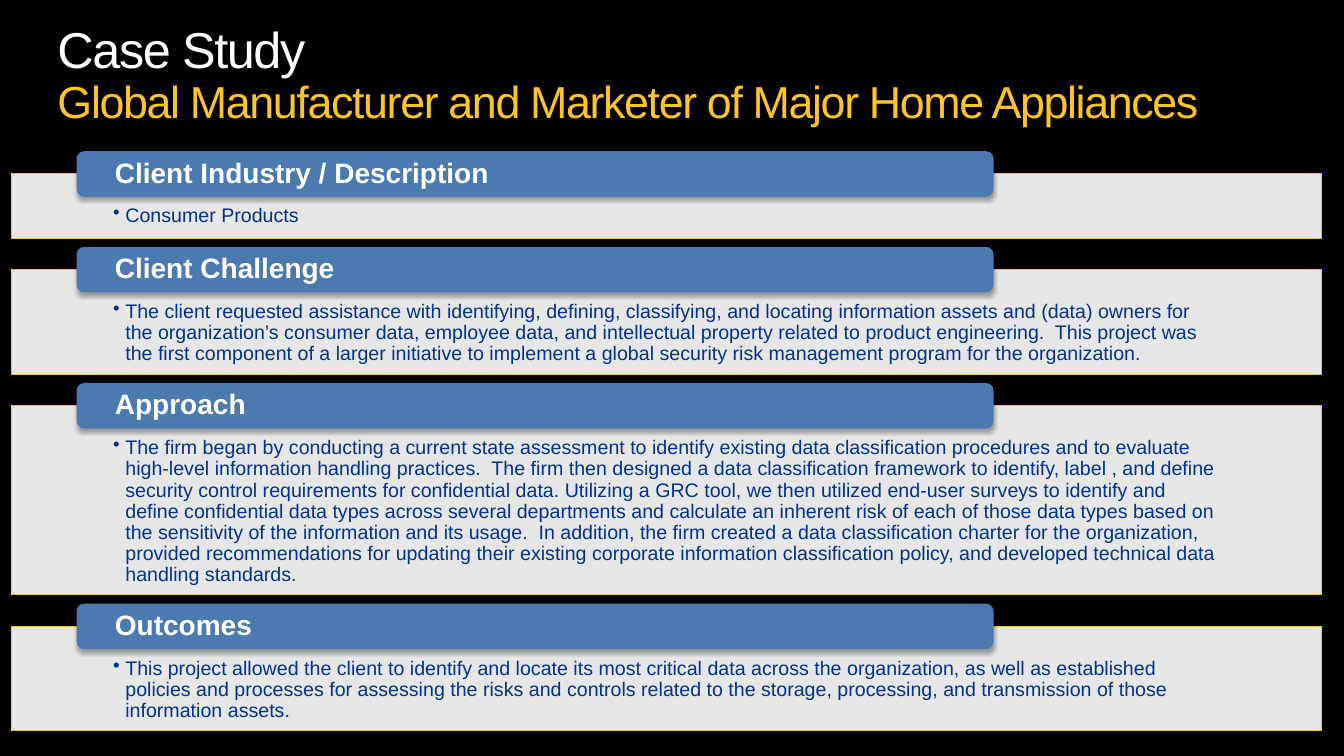
from lxml import etree
from pptx import Presentation
from pptx.dml.color import RGBColor
from pptx.enum.shapes import MSO_SHAPE as SHAPE
from pptx.enum.text import MSO_ANCHOR as ANCHOR
from pptx.oxml import parse_xml
from pptx.oxml.ns import nsdecls, qn
from pptx.util import Cm, Pt

HEADER_TOP = 3.81
HEADER_OVERLAP = 0.57
SECTION_GAP = 0.22

SECTIONS = [
    ("Client Industry / Description", 1.62, "Consumer Products"),
    ("Client Challenge", 2.64,
     "The client requested assistance with identifying, defining, classifying, and locating "
     "information assets and (data) owners for the organization’s consumer data, employee data, "
     "and intellectual property related to product engineering.  This project was the first "
     "component of a larger initiative to implement a global security risk management program "
     "for the organization."),
    ("Approach", 4.77,
     "The firm began by conducting a current state assessment to identify existing data "
     "classification procedures and to evaluate high-level information handling practices.  "
     "The firm then designed a data classification framework to identify, label , and define "
     "security control requirements for confidential data. Utilizing a GRC tool, we then "
     "utilized end-user surveys to identify and define confidential data types across several "
     "departments and calculate an inherent risk of each of those data types based on the "
     "sensitivity of the information and its usage.  In addition, the firm created a data "
     "classification charter for the organization, provided recommendations for updating their "
     "existing corporate information classification policy, and developed technical data "
     "handling standards."),
    ("Outcomes", 2.64,
     "This project allowed the client to identify and locate its most critical data across the "
     "organization, as well as established policies and processes for assessing the risks and "
     "controls related to the storage, processing, and transmission of those information assets."),
]


def rgb(value):
    return RGBColor.from_string(value)


class CaseSlide:
    font = "Arial"
    white = "FFFFFF"
    gold = "FFC425"
    blue = "4A7AAF"
    navy = "00338D"

    def __init__(self, prs):
        self.s = prs.slides.add_slide(prs.slide_layouts[6])
        fill = self.s.background.fill
        fill.solid()
        fill.fore_color.rgb = rgb("000000")

    def style(self, r, size, color, bold=False):
        r.font.name = self.font
        r.font.size = Pt(size)
        r.font.bold = bold
        r.font.color.rgb = rgb(color)

    def frame(self, sp, text, anchor, side=0, top=0, bottom=0):
        tf = sp.text_frame
        tf.word_wrap = True
        tf.vertical_anchor = anchor
        tf.margin_left = tf.margin_right = Cm(side)
        tf.margin_top, tf.margin_bottom = Cm(top), Cm(bottom)
        tf.text = text
        p = tf.paragraphs[0]
        p.line_spacing = 0.9
        return p

    def box(self, kind, x, y, w, h, color):
        sp = self.s.shapes.add_shape(kind, Cm(x), Cm(y), Cm(w), Cm(h))
        sp.shadow.inherit = False
        sp.fill.solid()
        sp.fill.fore_color.rgb = rgb(color)
        sp.line.fill.background()
        return sp

    def title(self, heading, subject):
        sp = self.s.shapes.add_textbox(Cm(1.45), Cm(0.64), Cm(30.96), Cm(2.62))
        p = self.frame(sp, "", ANCHOR.TOP)
        p.text = f"{heading}\v{subject}"
        for r, size, color in zip(p.runs, (36, 32), (self.white, self.gold)):
            self.style(r, size, color)
            r.font._element.set("spc", "-100")

    def panel(self, y, h, text):
        sp = self.box(SHAPE.RECTANGLE, 0.28, y, 33.02, h, self.white)
        color = sp.fill._xPr.find(qn("a:solidFill"))[0]
        etree.SubElement(color, qn("a:alpha")).set("val", "90000")
        sp.line.color.rgb = rgb(self.gold)
        sp.line.width = Pt(0.75)
        p = self.frame(sp, text, ANCHOR.TOP, 2.57, 0.81, 0.28)
        pPr = p._p.get_or_add_pPr()
        pPr.set("algn", "l")
        pPr.set("marL", str(Cm(0.31)))
        pPr.set("indent", str(-Cm(0.31)))
        etree.SubElement(pPr, qn("a:buChar")).set("char", "•")
        self.style(p.runs[0], 14, self.navy)

    def header(self, y, text):
        sp = self.box(SHAPE.ROUNDED_RECTANGLE, 1.93, y, 23.11, 1.15, self.blue)
        effects = sp._element.spPr.find(qn("a:effectLst"))
        effects.append(parse_xml(
            f'<a:outerShdw {nsdecls("a")} blurRad="{Pt(3.1)}" dist="{Pt(1.8)}" dir="5400000" '
            'rotWithShape="0"><a:srgbClr val="000000"><a:alpha val="35000"/></a:srgbClr>'
            '</a:outerShdw>'))
        p = self.frame(sp, text, ANCHOR.MIDDLE, 0.91)
        p._p.get_or_add_pPr().set("algn", "l")
        self.style(p.runs[0], 20, self.white, bold=True)


def main():
    prs = Presentation()
    prs.slide_width, prs.slide_height = Cm(33.87), Cm(19.05)
    slide = CaseSlide(prs)
    slide.title("Case Study", "Global Manufacturer and Marketer of Major Home Appliances")
    y = HEADER_TOP
    for heading, height, text in SECTIONS:
        slide.panel(y + HEADER_OVERLAP, height, text)
        slide.header(y, heading)
        y += HEADER_OVERLAP + height + SECTION_GAP
    prs.save("out.pptx")


if __name__ == "__main__":
    main()
